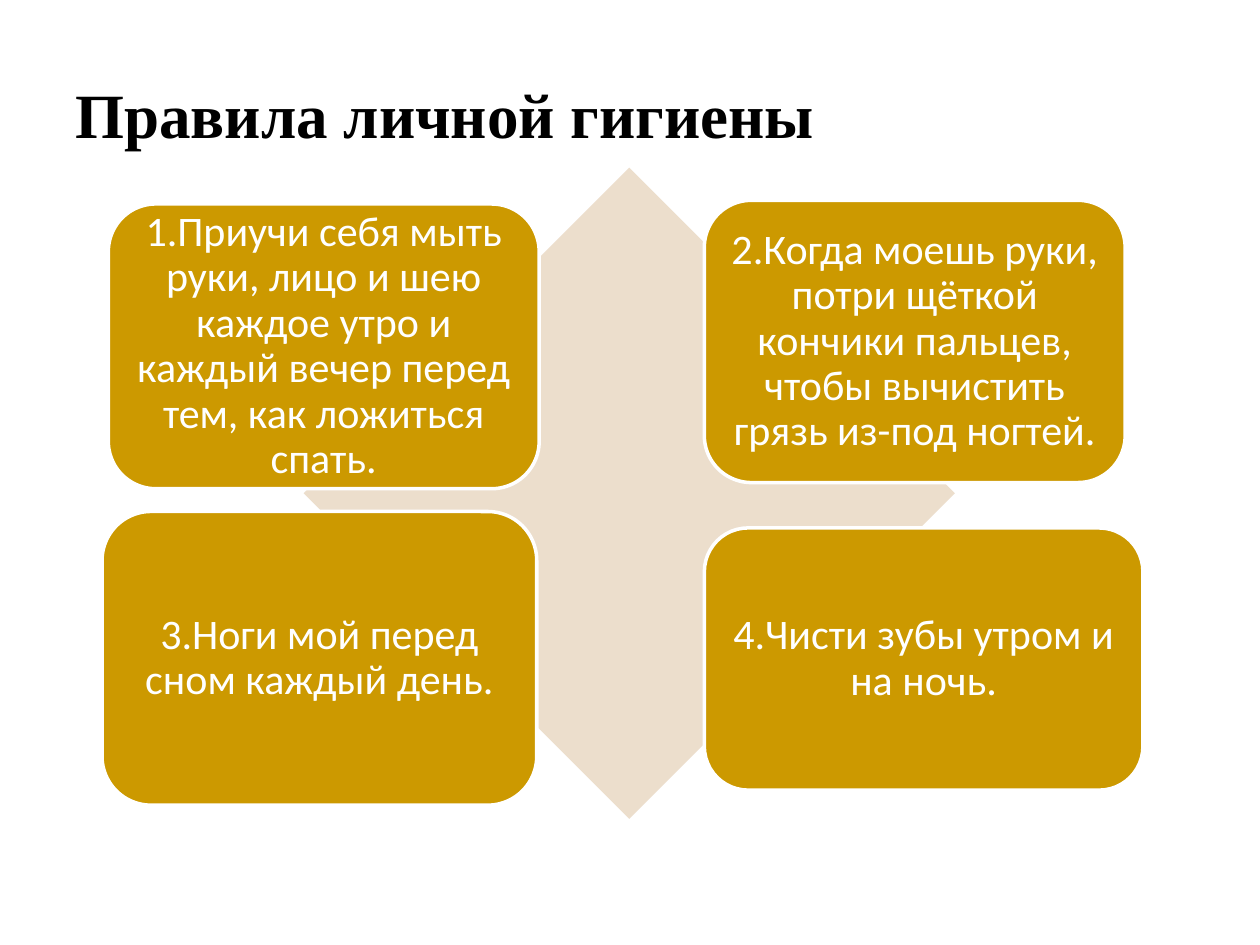
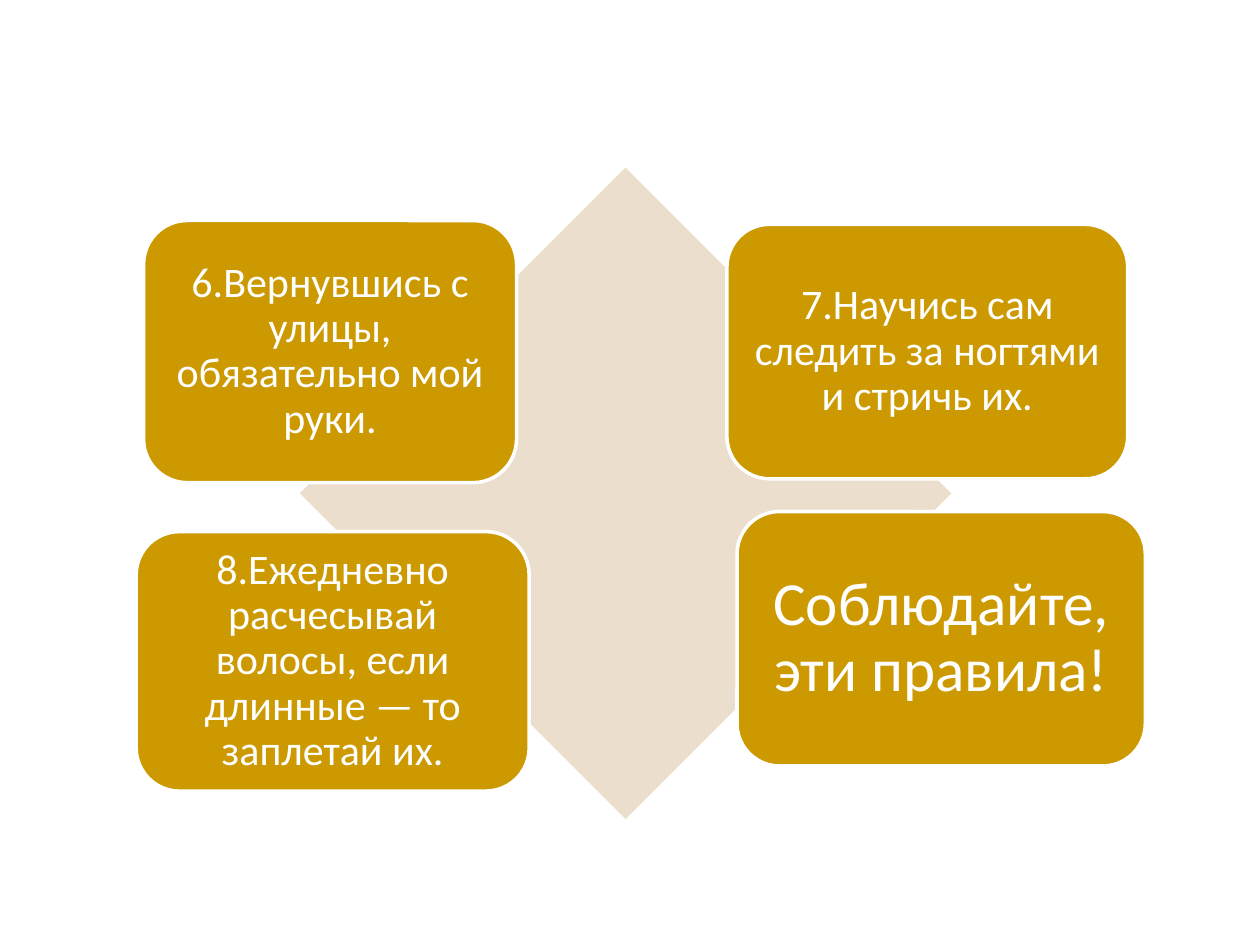
from pptx import Presentation
from pptx.dml.color import RGBColor as RGB
from pptx.enum.shapes import MSO_SHAPE as Shape
from pptx.enum.text import MSO_ANCHOR as Anchor, PP_ALIGN as Align
from pptx.util import Pt

COLORS = {"title": "000000", "diamond": "ECDECC", "card": "CC9900", "white": "FFFFFF"}
SIDE = 372.2  # width and height of the diamond
TOP = 95.8

# Each card: left, top, width, height, text, font size
HABITS = [
    (61.9, 116.6, 246.2, 162.7, "1.Приучи себя мыть руки, лицо и шею каждое утро "
     "и каждый вечер перед тем, как ложиться спать.", 24),
    (402.5, 114.5, 240.5, 161.3, "2.Когда моешь руки, потри щёткой кончики пальцев, "
     "чтобы вычистить грязь из-под ногтей.", 24),
    (58.3, 292.3, 248.4, 167.8, "3.Ноги мой перед сном каждый день.", 24),
    (402.5, 301.7, 250.6, 149.8, "4.Чисти зубы утром и на ночь.", 24),
]
MORE = [
    (82.1, 126, 213.1, 149.8, "6.Вернувшись с улицы, обязательно мой руки.", 24),
    (415.4, 128.2, 229, 145.4, "7.Научись сам следить за ногтями и стричь их.", 24),
    (77.8, 303.8, 224.6, 148.3, "8.Ежедневно расчесывай волосы, если длинные — "
     "то заплетай их.", 24),
    (421.2, 292.3, 233.3, 145.4, "Соблюдайте, эти правила!", 35),
]


def color(name):
    return RGB.from_string(COLORS[name])


def write(frame, text, font, size, tint, bold=False):
    frame.word_wrap = True
    frame.text = text
    style = frame.paragraphs[0].runs[0].font
    style.name, style.size, style.bold = font, Pt(size), bold
    style.color.rgb = color(tint)


def add_title(slide, text):
    box = slide.shapes.add_textbox(Pt(36), Pt(5.8), Pt(534.2), Pt(84.2))
    box.text_frame.vertical_anchor = Anchor.BOTTOM
    write(box.text_frame, text, "Times New Roman", 36, "title", bold=True)


def add_solid(slide, kind, fill, left, top, width, height):
    shape = slide.shapes.add_shape(kind, Pt(left), Pt(top), Pt(width), Pt(height))
    shape.shadow.inherit = False
    shape.fill.solid()
    shape.fill.fore_color.rgb = color(fill)
    return shape


def add_card(slide, left, top, width, height, text, size):
    card = add_solid(slide, Shape.ROUNDED_RECTANGLE, "card", left, top, width, height)
    card.line.color.rgb = color("white")
    card.line.width = Pt(2)
    frame = card.text_frame
    frame.vertical_anchor = Anchor.MIDDLE
    inset = Pt(size * 0.3)
    frame.margin_left = frame.margin_right = inset
    frame.margin_top = frame.margin_bottom = inset
    write(frame, text, "Calibri", size, "white")
    frame.paragraphs[0].alignment = Align.CENTER
    frame.paragraphs[0].line_spacing = 0.9


def add_matrix(slide, left, cards):
    """Draw a diamond with the four cards over its corners."""
    diamond = add_solid(slide, Shape.DIAMOND, "diamond", left, TOP, SIDE, SIDE)
    diamond.line.fill.background()
    for card in cards:
        add_card(slide, *card)


def main():
    deck = Presentation()
    deck.slide_width, deck.slide_height = Pt(720), Pt(540)
    blank = deck.slide_layouts[6]

    first = deck.slides.add_slide(blank)
    add_title(first, "Правила личной гигиены")
    add_matrix(first, 173.5, HABITS)

    second = deck.slides.add_slide(blank)
    add_matrix(second, 171.4, MORE)

    deck.save("out.pptx")


if __name__ == "__main__":
    main()
